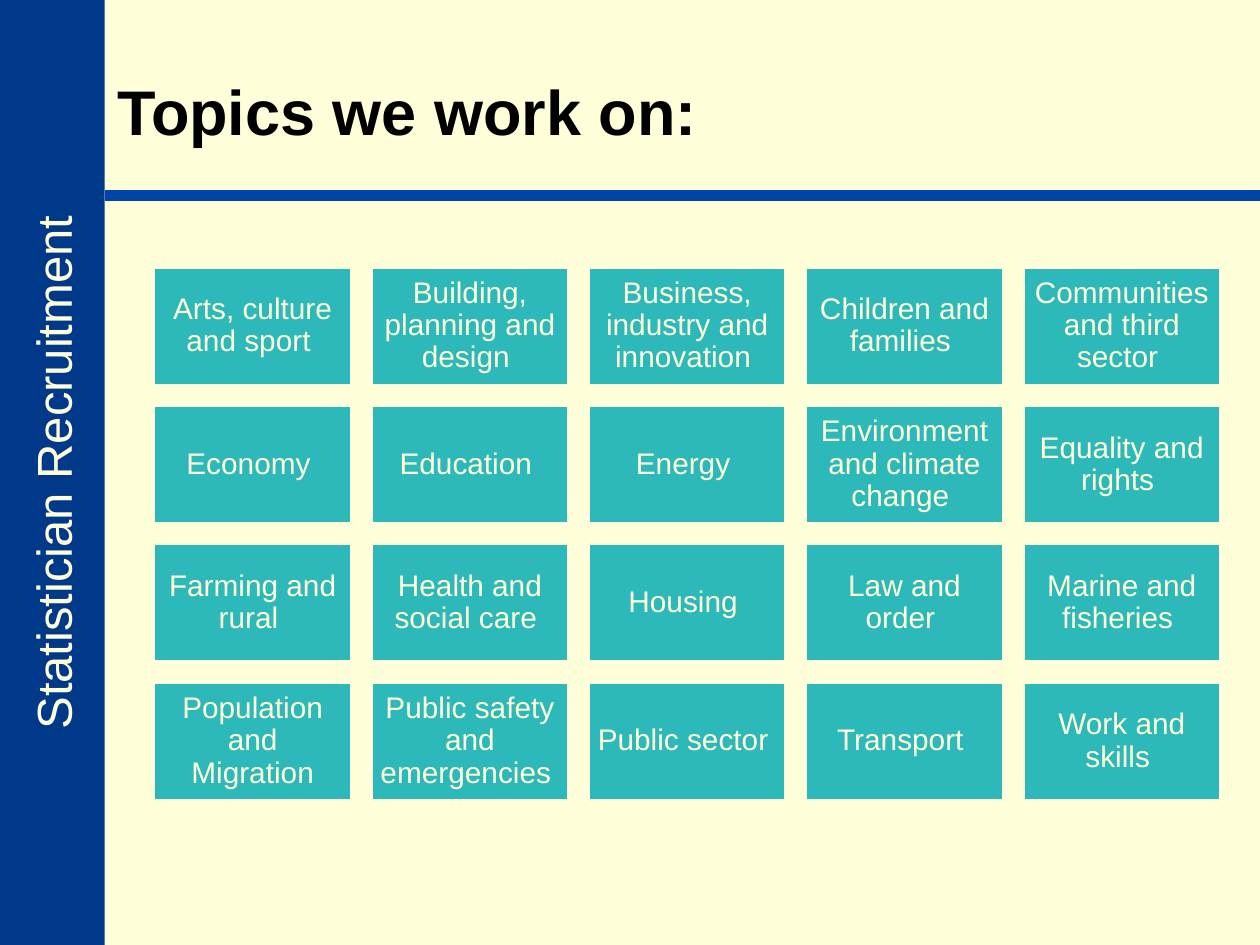
from dataclasses import dataclass
from typing import Any

from lxml import etree
from pptx import Presentation
from pptx.dml.color import RGBColor
from pptx.enum.shapes import MSO_CONNECTOR, MSO_SHAPE
from pptx.enum.text import MSO_ANCHOR, MSO_AUTO_SIZE, PP_ALIGN
from pptx.oxml.ns import qn
from pptx.util import Cm, Pt

RECT = MSO_SHAPE.RECTANGLE
STRAIGHT = MSO_CONNECTOR.STRAIGHT
MIDDLE = MSO_ANCHOR.MIDDLE
FIXED = MSO_AUTO_SIZE.NONE
LEFT = PP_ALIGN.LEFT
CENTER = PP_ALIGN.CENTER

CREAM = "FFFFD9"
NAVY = "00388A"
BLUE = "0044A8"
TEAL = "2DB9B9"
BLACK = "000000"

WIDTH, HEIGHT = 25.4, 19.05
BAND = 2.11
RULE = 3.94
LEFT_EDGE, TOP_EDGE = 3.1, 5.38
STEP_X, STEP_Y = 4.38, 2.79
CARD_W, CARD_H = 3.99, 2.39
INSET = Cm(0.18)

TOPICS = [
    ["Arts, culture and sport ", "Building, planning and design ",
     "Business, industry and innovation ", "Children and families ",
     "Communities and third sector "],
    ["Economy ", "Education ", "Energy ", "Environment and climate change ",
     "Equality and rights "],
    ["Farming and rural ", "Health and social care ", "Housing ",
     "Law and order ", "Marine and fisheries "],
    ["Population and Migration", "Public safety and emergencies ",
     "Public sector ", "Transport ", "Work and skills "],
]

CARD_FRAME = {
    "margin_left": INSET, "margin_right": INSET,
    "margin_top": INSET, "margin_bottom": INSET,
}


@dataclass
class Box:
    text: str
    left: float
    top: float
    width: float
    height: float
    fill: str


def color(code: str) -> RGBColor:
    return RGBColor.from_string(code)


def apply(target: Any, values: dict[str, Any]) -> None:
    for name, value in values.items():
        setattr(target, name, value)


def write(shape: Any, text: str, size: int, ink: str, align: Any,
          bold: bool = False, wrap: bool = True) -> None:
    frame = shape.text_frame
    frame.text = text
    apply(frame, {"auto_size": FIXED, "word_wrap": wrap,
                  "vertical_anchor": MIDDLE})
    line = frame.paragraphs[0]
    line.alignment = align
    font = line.runs[0].font
    apply(font, {"name": "Arial", "size": Pt(size), "bold": bold})
    font.color.rgb = color(ink)


def draw_box(slide: Any, box: Box) -> Any:
    shape = slide.shapes.add_shape(
        RECT, Cm(box.left), Cm(box.top), Cm(box.width), Cm(box.height))
    shape.shadow.inherit = False
    shape.fill.solid()
    shape.fill.fore_color.rgb = color(box.fill)
    return shape


def draw_band(slide: Any) -> None:
    shift = (HEIGHT - BAND) / 2
    box = Box("Statistician Recruitment", -shift, shift, HEIGHT, BAND, NAVY)
    shape = draw_box(slide, box)
    shape.rotation = 270
    shape.line.fill.background()
    write(shape, box.text, 28, CREAM, CENTER, wrap=False)


def draw_rule(slide: Any) -> None:
    rule = slide.shapes.add_connector(
        STRAIGHT, Cm(BAND), Cm(RULE), Cm(WIDTH), Cm(RULE))
    rule.line.color.rgb = color(BLUE)
    rule.line.width = Pt(6)
    etree.SubElement(rule._element.spPr, qn("a:effectLst"))


def draw_title(slide: Any) -> None:
    title = slide.shapes.title
    apply(title, {"left": Cm(BAND), "top": Cm(0.53),
                  "width": Cm(22.02), "height": Cm(3.4)})
    write(title, "Topics we work on:", 36, BLACK, LEFT, bold=True)


def draw_card(slide: Any, box: Box) -> None:
    shape = draw_box(slide, box)
    shape.line.color.rgb = color(CREAM)
    shape.line.width = Pt(2)
    write(shape, box.text, 17, CREAM, CENTER)
    apply(shape.text_frame, CARD_FRAME)
    shape.text_frame.paragraphs[0].line_spacing = 0.9


def main() -> None:
    deck = Presentation()
    apply(deck, {"slide_width": Cm(WIDTH), "slide_height": Cm(HEIGHT)})
    slide = deck.slides.add_slide(deck.slide_layouts[5])
    slide.background.fill.solid()
    slide.background.fill.fore_color.rgb = color(CREAM)
    draw_band(slide)
    draw_rule(slide)
    draw_title(slide)
    for row, topics in enumerate(TOPICS):
        for col, text in enumerate(topics):
            draw_card(slide, Box(text, LEFT_EDGE + col * STEP_X,
                                 TOP_EDGE + row * STEP_Y,
                                 CARD_W, CARD_H, TEAL))
    deck.save("out.pptx")


if __name__ == "__main__":
    main()
